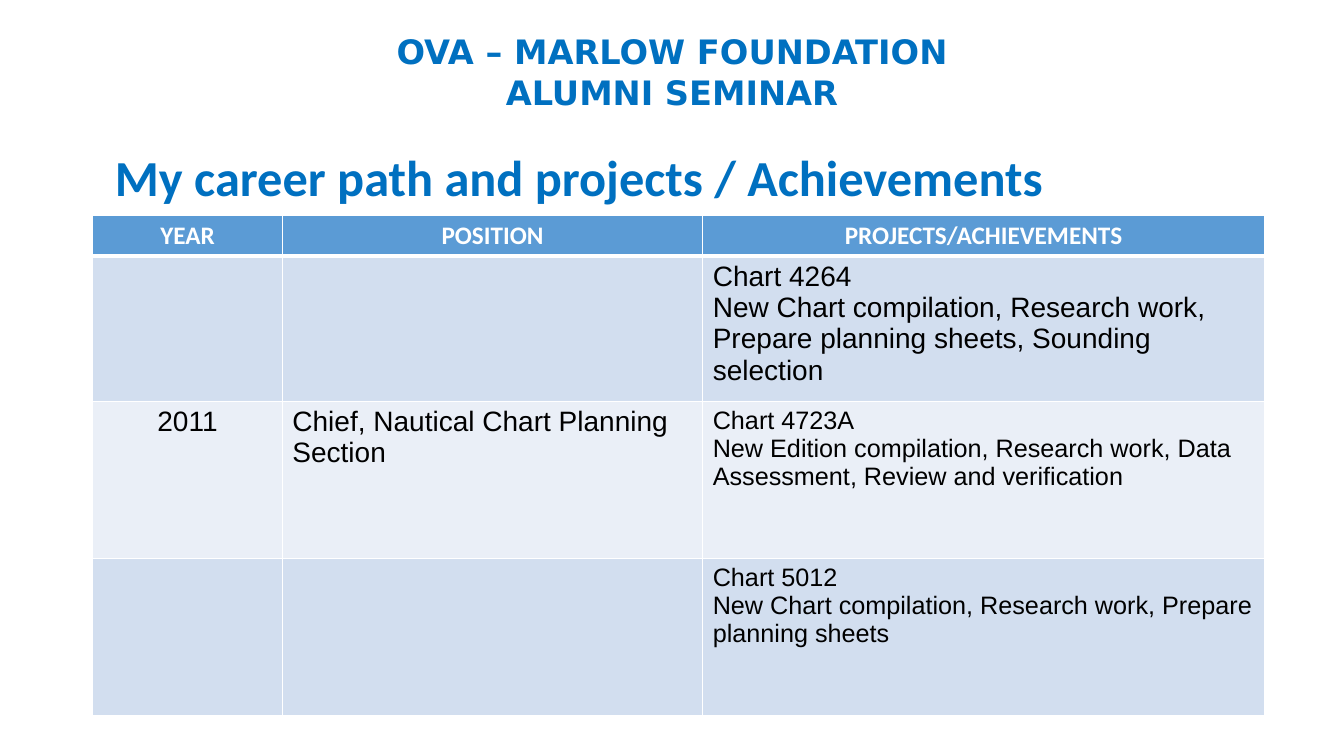
from lxml import etree
from pptx import Presentation
from pptx.dml.color import RGBColor
from pptx.enum import text
from pptx.oxml.ns import qn
from pptx.util import Inches, Pt

CENTER, LEFT = text.PP_ALIGN.CENTER, text.PP_ALIGN.LEFT


def color(value):
    return RGBColor.from_string(value)


def write(frame, lines, font, size, fill, bold, align):
    frame.word_wrap = True
    for index, line in enumerate(lines):
        paragraph = frame.paragraphs[0] if index == 0 else frame.add_paragraph()
        paragraph.text = line
        paragraph.alignment = align
        paragraph.font.name = font
        paragraph.font.size = Pt(size)
        paragraph.font.bold = bold
        paragraph.font.color.rgb = color(fill)


presentation = Presentation()
presentation.slide_width, presentation.slide_height = Inches(13.33), Inches(7.5)
slide = presentation.slides.add_slide(presentation.slide_layouts[6])

# Seminar name
seminar = slide.shapes.add_textbox(Inches(3.76), Inches(0.26), Inches(5.81), Inches(0.91))
write(seminar.text_frame, ["OVA – MARLOW FOUNDATION", "ALUMNI SEMINAR"],
      "DejaVu Sans", 24, "0070C0", True, CENTER)

# Slide title
title = slide.shapes.add_textbox(Inches(0.92), Inches(1.43), Inches(11.5), Inches(0.71))
title.text_frame.vertical_anchor = text.MSO_ANCHOR.MIDDLE
title.text_frame.margin_left = Inches(0.22)
write(title.text_frame, ["My career path and projects / Achievements"],
      "Calibri", 36, "0070C0", True, LEFT)
title.text_frame.paragraphs[0].line_spacing = 0.9

# Career table: each cell is its lines and their size
headings = ["YEAR", "POSITION", "PROJECTS/ACHIEVEMENTS"]
rows = [
    [([], 20), ([], 20),
     (["Chart 4264", "New Chart compilation, Research work, Prepare planning sheets, "
       "Sounding selection"], 20)],
    [(["2011"], 20), (["Chief, Nautical Chart Planning Section"], 20),
     (["Chart 4723A", "New Edition compilation, Research work, Data Assessment, "
       "Review and verification"], 18)],
    [([], 20), ([], 20),
     (["Chart 5012", "New Chart compilation, Research work, Prepare planning sheets"], 18)],
]
widths = [1.88, 4.17, 5.57]
heights = [0.39, 1.44, 1.56, 1.56]
table = slide.shapes.add_table(len(heights), len(widths), Inches(0.92), Inches(2.14),
                               Inches(sum(widths)), Inches(sum(heights))).table
for column, width in zip(table.columns, widths):
    column.width = Inches(width)
for row, height in zip(table.rows, heights):
    row.height = Inches(height)

for column, heading in enumerate(headings):
    write(table.cell(0, column).text_frame, [heading], "Calibri", 18, "FFFFFF", True, CENTER)
for number, row in enumerate(rows, 1):
    for column, (lines, size) in enumerate(row):
        write(table.cell(number, column).text_frame, lines, "Arial", size, "000000", False,
              CENTER if column == 0 else LEFT)

# Row fills and white borders, thicker below the header
row_fills = ["5B9BD5", "D2DEEF", "EAEFF7", "D2DEEF"]
for number, row_fill in enumerate(row_fills):
    for cell in table.rows[number].cells:
        properties = cell._tc.get_or_add_tcPr()
        for side in ("lnL", "lnR", "lnT", "lnB"):
            header_rule = (number, side) in ((0, "lnB"), (1, "lnT"))
            line = etree.SubElement(properties, qn("a:" + side), w=str(Pt(3 if header_rule else 1)))
            solid = etree.SubElement(line, qn("a:solidFill"))
            etree.SubElement(solid, qn("a:srgbClr"), val="FFFFFF")
        cell.fill.solid()
        cell.fill.fore_color.rgb = color(row_fill)

presentation.save("out.pptx")
